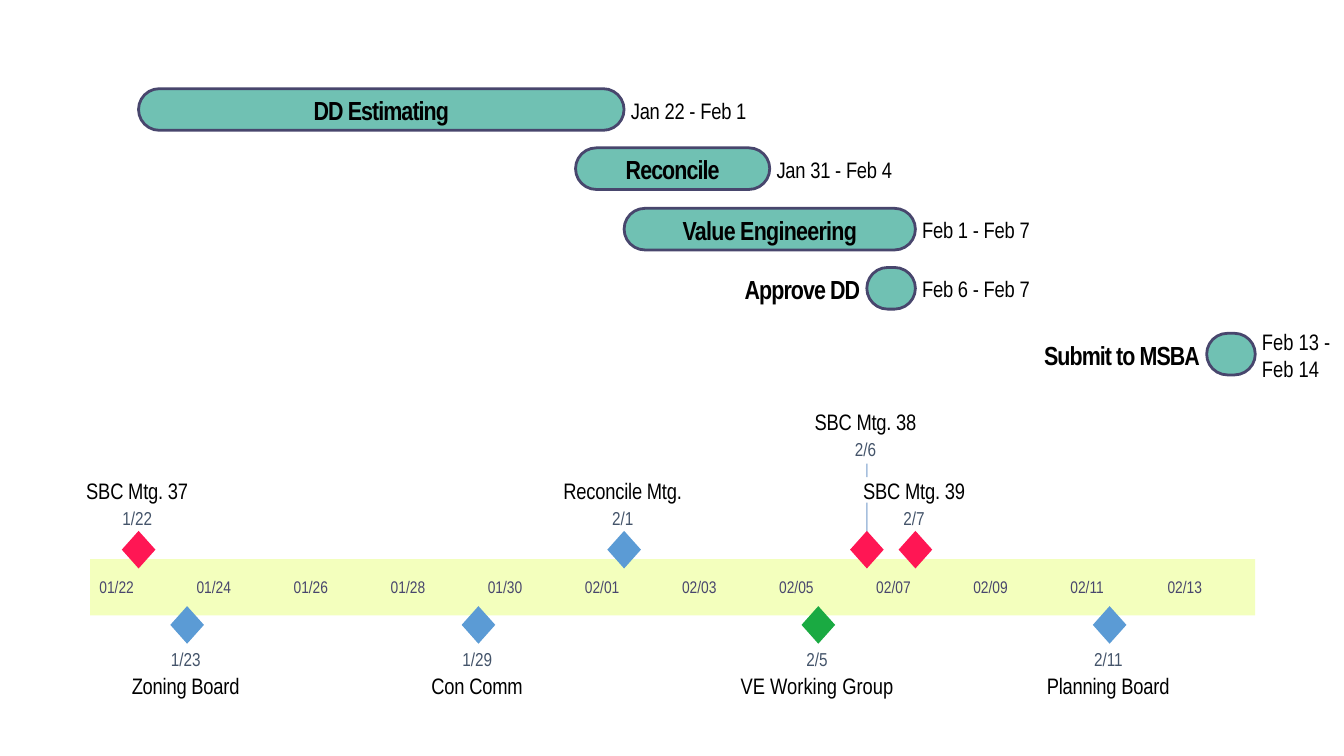
from lxml import etree
from pptx import Presentation
from pptx import util as u
from pptx.dml import color
from pptx.enum import shapes, text
from pptx.oxml import ns

SCALE = 9144
DAYS = 24
FONT = "Arial Narrow"
COLORS = {
    "band": "F3FFBD", "tick": "48466D", "leader": "4F81BD", "date": "44546A",
    "black": "000000", "bar": "70C1B3", "outline": "48466D",
    "red": "FF1654", "blue": "5B9BD5", "green": "1AAA42",
}
FORMATS = {
    "tick": {"size": u.Pt(9)},
    "date": {"size": u.Pt(10)},
    "label": {"size": u.Pt(12)},
    "task": {"size": u.Pt(14), "bold": True},
}
FRAME = {
    "margin_left": 0, "margin_right": 0, "margin_top": 0, "margin_bottom": 0,
    "vertical_anchor": text.MSO_ANCHOR.MIDDLE, "auto_size": text.MSO_AUTO_SIZE.NONE,
}
LEFT, CENTER, RIGHT = text.PP_ALIGN.LEFT, text.PP_ALIGN.CENTER, text.PP_ALIGN.RIGHT

TASKS = [
    ("DD Estimating", 0, 10, 0, 103, "Jan 22 - Feb 1", 89),
    ("Reconcile", 9, 13, 44, 71, "Jan 31 - Feb 4", 89),
    ("Value Engineering", 10, 16, 89, 131, "Feb 1 - Feb 7", 83),
    ("Approve DD", 15, 16, 133, 88, "Feb 6 - Feb 7", 83),
    ("Submit to MSBA", 22, 23, 182, 118, "Feb 13 - Feb 14", 56),
]
UPPER = [
    ("SBC Mtg. 37", 78, "1/22", 0, "red", 51),
    ("Reconcile Mtg.", 92, "2/1", 10, "blue", 51),
    ("SBC Mtg. 38", 78, "2/6", 15, "red", 0),
    ("SBC Mtg. 39", 78, "2/7", 16, "red", 51),
]
LOWER = [
    ("Zoning Board", 83, "1/23", 1, "blue", 49),
    ("Planning Board", 94, "2/11", 20, "blue", 49),
    ("Con Comm", 69, "1/29", 7, "blue", 49),
    ("VE Working Group", 115, "2/5", 14, "green", 49),
]
TICKS = ["01/22", "01/24", "01/26", "01/28", "01/30", "02/01",
         "02/03", "02/05", "02/07", "02/09", "02/11", "02/13"]


def px(*lengths):
    """Turn px lengths into EMU."""
    return [u.Emu(round(length * SCALE)) for length in lengths]


def rgb(name):
    """Look up a named colour."""
    return color.RGBColor.from_string(COLORS[name])


def day_x(box, day):
    """Return the x of a day counted from January 22."""
    return box[0] + box[2] * (day + 1) / DAYS


def add_text(slide, box, words, style, color_name, align=LEFT, spacing=0, wrap=False):
    """Add one line of styled text in a box without margins."""
    shape = slide.shapes.add_textbox(*px(*box))
    for name, value in {**FRAME, "word_wrap": wrap}.items():
        setattr(shape.text_frame, name, value)
    paragraph = shape.text_frame.paragraphs[0]
    paragraph.alignment = align
    run = paragraph.add_run()
    run.text = words
    for name, value in {"name": FONT, **FORMATS[style]}.items():
        setattr(run.font, name, value)
    run.font.color.rgb = rgb(color_name)
    if spacing:
        run._r.get_or_add_rPr().set("spc", str(spacing))


def add_filled(slide, kind, box, fill, outline=None):
    """Add a flat preset shape with an optional outline."""
    shape = slide.shapes.add_shape(kind, *px(*box))
    shape.shadow.inherit = False
    shape.fill.solid()
    shape.fill.fore_color.rgb = rgb(fill)
    if outline:
        shape.line.color.rgb = rgb(outline)
        shape.line.width = u.Pt(1.5)
    else:
        shape.line.fill.background()
    return shape


def place_leader(slide, box, day, spans):
    """Draw the broken, half-transparent leader of a raised milestone."""
    x = day_x(box, day)
    for start, end in spans:
        line = slide.shapes.add_connector(
            shapes.MSO_CONNECTOR.STRAIGHT, *px(x, box[1] + start, x, box[1] + end))
        line.line.color.rgb = rgb("leader")
        line.line.width = u.Pt(0.75)
        properties = line._element.spPr
        tint = properties.find(".//" + ns.qn("a:srgbClr"))
        etree.SubElement(tint, ns.qn("a:alpha")).set("val", "50000")
        etree.SubElement(properties, ns.qn("a:effectLst"))


def place_band(slide, box):
    """Draw the date band with a label every second day."""
    left, top, width, height = box
    add_filled(slide, shapes.MSO_SHAPE.RECTANGLE, box, "band")
    step = 2 * width / DAYS
    for index, words in enumerate(TICKS):
        add_text(slide, (left + 7 + index * step, top + 14, 26, 14), words, "tick", "tick")


def place_milestones(slide, box, milestones, diamond_top, date_shift):
    """Place diamonds with their dates and names along one side of the band."""
    top = box[1]
    for label, width, date, day, fill, label_top in milestones:
        x = day_x(box, day)
        center = x - 1
        date_width = 22 if len(date) > 3 else 17
        spacing = 0 if label == "VE Working Group" else -10
        add_text(slide, (center - width / 2, top + label_top, width, 20),
                 label, "label", "black", CENTER, spacing)
        add_text(slide, (center - date_width / 2, top + label_top + date_shift, date_width, 17),
                 date, "date", "date", CENTER)
        add_filled(slide, shapes.MSO_SHAPE.DIAMOND, (x - 12.5, top + diamond_top, 25, 28), fill)


def place_tasks(slide, box):
    """Place the task bars with their names and date ranges."""
    for name, first, last, offset, name_width, dates, dates_width in TASKS:
        start, end, top = day_x(box, first), day_x(box, last), box[1] + offset
        bar = add_filled(slide, shapes.MSO_SHAPE.ROUNDED_RECTANGLE,
                         (start, top, end - start, 31), "bar", "outline")
        bar.adjustments[0] = 0.5
        inside = name_width < end - start
        name_left = (start + end - name_width) / 2 if inside else start - 5 - name_width
        spacing = -40 if name == "Value Engineering" else -50
        add_text(slide, (name_left, top + 4, name_width, 24), name, "task", "black",
                 CENTER if inside else RIGHT, spacing)
        wrap = dates_width < 60
        dates_top, dates_height = (top - 4, 40) if wrap else (top + 6, 20)
        add_text(slide, (end + 5, dates_top, dates_width, dates_height),
                 dates, "label", "black", LEFT, 0 if wrap else -10, wrap)


def main():
    """Build the schedule slide."""
    presentation = Presentation()
    presentation.slide_width, presentation.slide_height = px(1000, 562.5)
    slide = presentation.slides.add_slide(presentation.slide_layouts[6])
    upper = (67, 304, 867, 119)
    place_leader(slide, upper, 15, [(70, 105), (41, 51)])
    place_band(slide, (67, 416, 867, 42))
    place_milestones(slide, upper, UPPER, 91, 22)
    place_milestones(slide, (67, 451, 867, 69), LOWER, 0, -18)
    place_tasks(slide, (67, 66, 867, 213))
    presentation.save("out.pptx")


if __name__ == "__main__":
    main()
